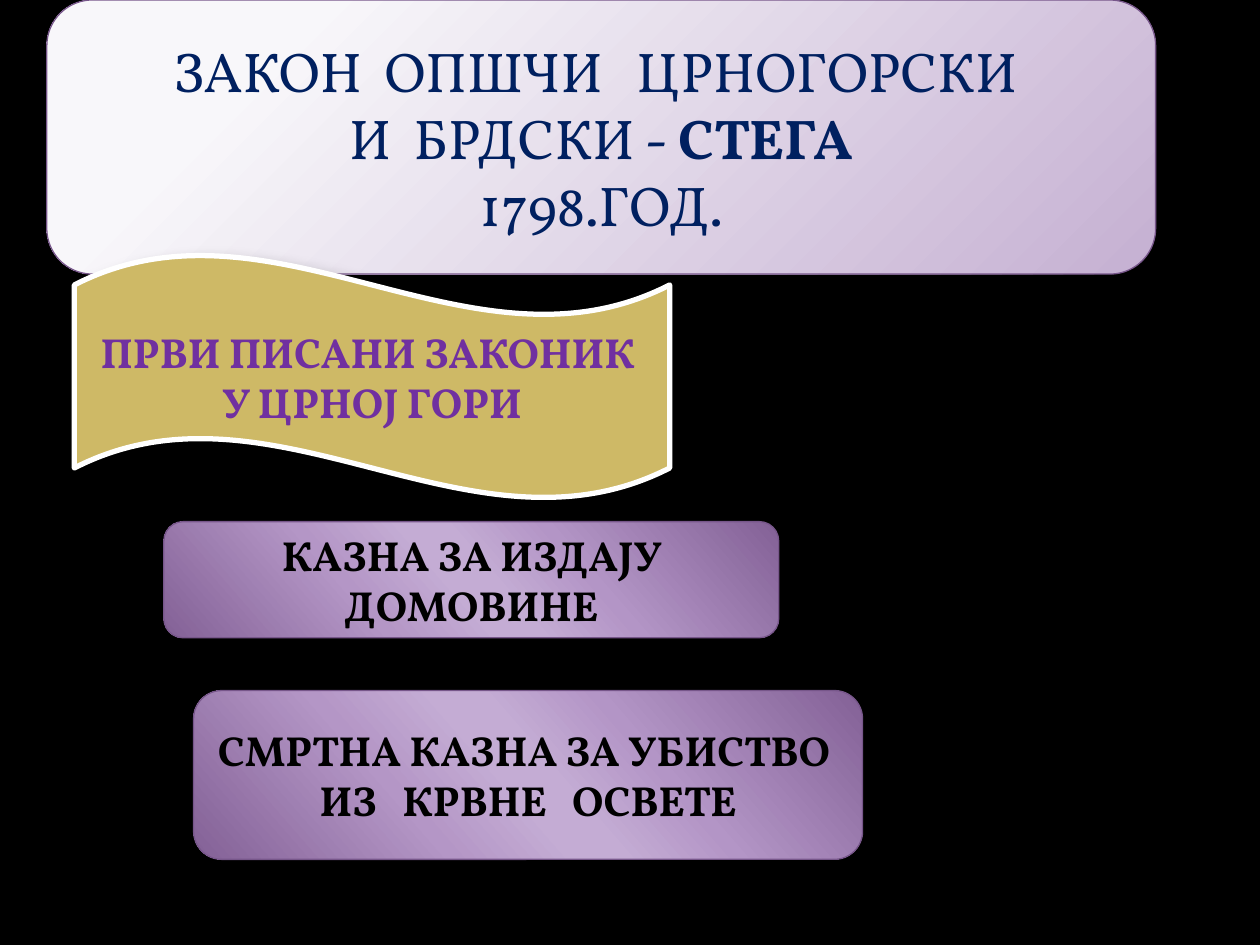
from lxml import etree
from pptx import Presentation
from pptx.dml.color import RGBColor
from pptx.enum.shapes import MSO_SHAPE
from pptx.enum.text import MSO_ANCHOR, PP_ALIGN
from pptx.oxml.ns import qn
from pptx.util import Pt

ROUNDED = MSO_SHAPE.ROUNDED_RECTANGLE
WAVE = MSO_SHAPE.WAVE
MIDDLE = MSO_ANCHOR.MIDDLE
CENTER = PP_ALIGN.CENTER

FONT = "Vollkorn"
COLORS = {
    "background": "000000",
    "shadow": "000000",
    "title": "002060",
    "banner": "CEB966",
    "banner_line": "FFFFFF",
    "banner_text": "7030A0",
    "box_line": "77568A",
    "penalty_text": "000000",
}
TITLE_STOPS = [(20, "F8F7FA"), (100, "C5B0D2")]
PENALTY_STOPS = [(0, "836196"), (33, "B395C6"), (47, "C4ACD4"),
                 (53, "C4ACD4"), (68, "B496C6"), (100, "836196")]
# Opacity in percent, blur and distance in points
SOFT_SHADOW = (35, 10.2, 8)
DEEP_SHADOW = (26, 15, 18)


def rgb(name):
    return RGBColor.from_string(COLORS[name])


def add_node(parent, tag, **attributes):
    node = etree.SubElement(parent, qn(tag))
    for key, value in attributes.items():
        node.set(key, str(value))
    return node


def fill_gradient(shape, stops, angle=None):
    """Linear gradient at an angle, or circular from the top left corner."""
    shape.fill.gradient()
    gradient = shape._element.spPr.find(qn("a:gradFill"))
    for child in list(gradient):
        gradient.remove(child)
    stop_list = add_node(gradient, "a:gsLst")
    for position, color in stops:
        stop = add_node(stop_list, "a:gs", pos=position * 1000)
        add_node(stop, "a:srgbClr", val=color)
    if angle is None:
        circle = add_node(gradient, "a:path", path="circle")
        add_node(circle, "a:fillToRect", l=-15000, t=-15000, r=115000, b=115000)
    else:
        add_node(gradient, "a:lin", ang=angle * 60000, scaled=0)


def add_shadow(shape, opacity, blur, distance):
    shape.shadow.inherit = False
    effects = shape._element.spPr.find(qn("a:effectLst"))
    outer = add_node(effects, "a:outerShdw", blurRad=int(Pt(blur)),
                     dist=int(Pt(distance)), dir=45 * 60000, rotWithShape=0)
    color = add_node(outer, "a:srgbClr", val=COLORS["shadow"])
    add_node(color, "a:alpha", val=opacity * 1000)


def add_panel(slide, kind, box, line_color, line_width, shadow):
    panel = slide.shapes.add_shape(kind, *(Pt(length) for length in box))
    panel.line.color.rgb = rgb(line_color)
    panel.line.width = Pt(line_width)
    add_shadow(panel, *shadow)
    return panel


def write_lines(panel, lines, size, color, bold):
    frame = panel.text_frame
    frame.word_wrap = True
    frame.vertical_anchor = MIDDLE
    frame.text = "\n".join(lines)
    for paragraph in frame.paragraphs:
        paragraph.alignment = CENTER
        for run in paragraph.runs:
            format_run(run, size, color, bold)


def format_run(run, size, color, bold):
    run.font.name = FONT
    run.font.size = Pt(size)
    run.font.bold = bold
    run.font.color.rgb = rgb(color)


def add_title(slide, box):
    title = add_panel(slide, ROUNDED, box, "box_line", 0.75, SOFT_SHADOW)
    fill_gradient(title, TITLE_STOPS)
    lines = ["ЗАКОН  ОПШЧИ   ЦРНОГОРСКИ ", "И  БРДСКИ - ", "1798.ГОД."]
    write_lines(title, lines, 32, "title", False)
    law_name = title.text_frame.paragraphs[1].add_run()
    law_name.text = "СТЕГА"
    format_run(law_name, 32, "title", True)


def add_banner(slide, box):
    banner = add_panel(slide, WAVE, box, "banner_line", 3, SOFT_SHADOW)
    banner.fill.solid()
    banner.fill.fore_color.rgb = rgb("banner")
    write_lines(banner, ["ПРВИ ПИСАНИ ЗАКОНИК  У ЦРНОЈ ГОРИ"], 24, "banner_text", True)


def add_penalty(slide, box, lines):
    penalty = add_panel(slide, ROUNDED, box, "box_line", 0.75, DEEP_SHADOW)
    fill_gradient(penalty, PENALTY_STOPS, angle=139)
    write_lines(penalty, lines, 24, "penalty_text", True)


def main():
    presentation = Presentation()
    presentation.slide_width = Pt(720)
    presentation.slide_height = Pt(540)
    slide = presentation.slides.add_slide(presentation.slide_layouts[6])
    slide.background.fill.solid()
    slide.background.fill.fore_color.rgb = rgb("background")

    add_title(slide, (26.8, 0, 633.6, 156.6))
    add_banner(slide, (42.5, 145.4, 340.2, 139.5))
    add_penalty(slide, (93.6, 298.1, 351.4, 66.4), ["КАЗНА ЗА ИЗДАЈУ ДОМОВИНЕ"])
    add_penalty(slide, (110.6, 394.6, 382.3, 96.5),
                ["СМРТНА КАЗНА ЗА УБИСТВО ", "ИЗ   КРВНЕ   ОСВЕТЕ"])

    presentation.save("out.pptx")


if __name__ == "__main__":
    main()
